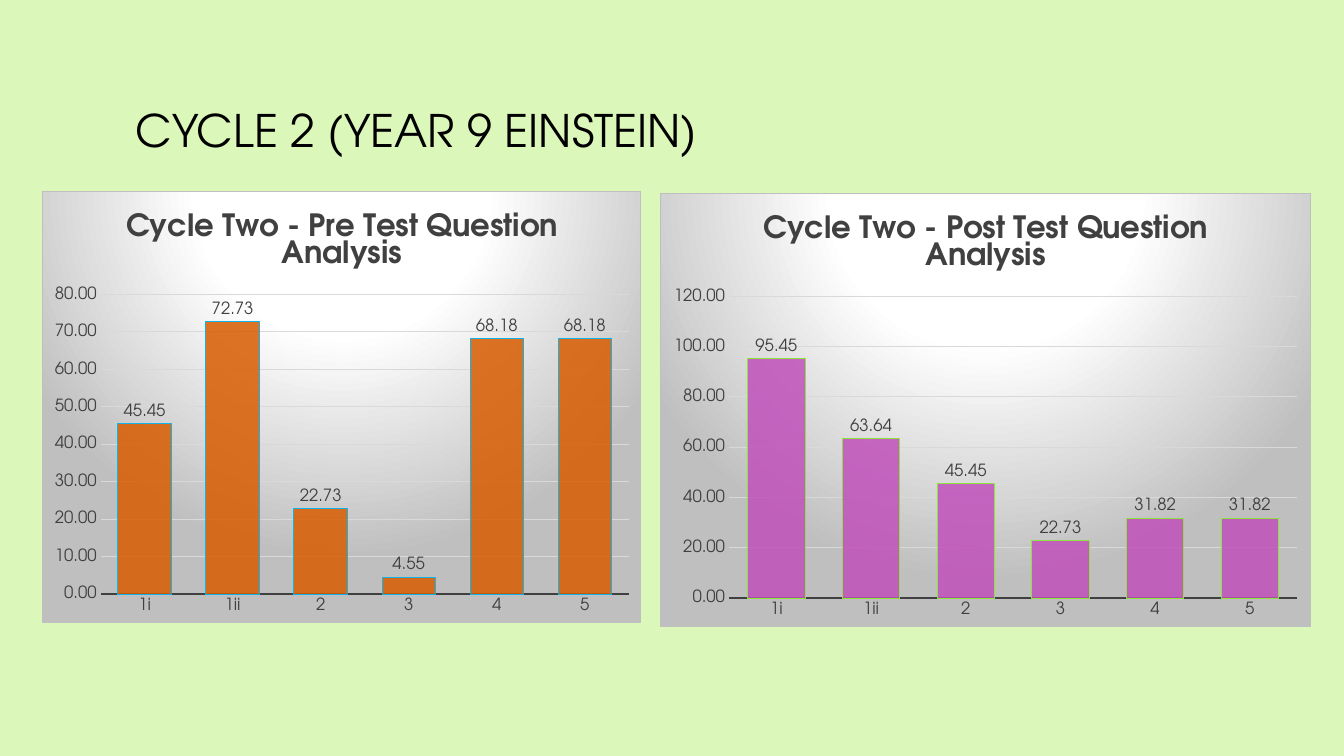
from lxml import etree
from pptx import Presentation
from pptx.chart.data import CategoryChartData
from pptx.dml.color import RGBColor
from pptx.enum.chart import XL_CHART_TYPE, XL_LABEL_POSITION, XL_TICK_MARK
from pptx.enum.text import MSO_ANCHOR
from pptx.oxml import parse_xml
from pptx.oxml.ns import qn
from pptx.util import Inches, Pt

COLUMNS = XL_CHART_TYPE.COLUMN_CLUSTERED
OUTSIDE_END = XL_LABEL_POSITION.OUTSIDE_END
NO_TICK = XL_TICK_MARK.NONE
MIDDLE = MSO_ANCHOR.MIDDLE

FONT = "TeX Gyre Adventor"
BLACK = RGBColor(0x00, 0x00, 0x00)
PALE_GREEN = RGBColor(0xDC, 0xF7, 0xBA)
DARK_GREY = RGBColor(0x40, 0x40, 0x40)
GRID_GREY = RGBColor(0xD9, 0xD9, 0xD9)
ORANGE = RGBColor(0xD8, 0x5C, 0x00)
BLUE = RGBColor(0x12, 0xB2, 0xEB)
PURPLE = RGBColor(0xC0, 0x50, 0xBB)
GREEN = RGBColor(0x8E, 0xE2, 0x40)

QUESTIONS = ["1i", "1ii", "2", "3", "4", "5"]
PRE_SCORES = [45.45, 72.73, 22.73, 4.55, 68.18, 68.18]
POST_SCORES = [95.45, 63.64, 45.45, 22.73, 31.82, 31.82]

PANEL_XML = """
<c:spPr xmlns:c="http://schemas.openxmlformats.org/drawingml/2006/chart"
        xmlns:a="http://schemas.openxmlformats.org/drawingml/2006/main">
  <a:gradFill>
    <a:gsLst>
      <a:gs pos="0"><a:srgbClr val="FFFFFF"/></a:gs>
      <a:gs pos="39000"><a:srgbClr val="FFFFFF"/></a:gs>
      <a:gs pos="100000"><a:srgbClr val="BFBFBF"/></a:gs>
    </a:gsLst>
    <a:path path="circle">
      <a:fillToRect l="50000" t="-80000" r="50000" b="180000"/>
    </a:path>
  </a:gradFill>
  <a:ln w="9525"><a:solidFill><a:srgbClr val="BFBFBF"/></a:solidFill></a:ln>
</c:spPr>
"""


def style_font(font, size, color, bold=False):
    font.name = FONT
    font.size = Pt(size)
    font.bold = bold
    font.color.rgb = color


def add_heading(slide, text):
    heading = slide.shapes.add_textbox(
        Inches(1.25), Inches(0.67), Inches(10.83), Inches(1.24))
    frame = heading.text_frame
    frame.word_wrap = True
    frame.vertical_anchor = MIDDLE
    frame.text = text
    style_font(frame.paragraphs[0].runs[0].font, 32, BLACK)


def style_axes(chart, top, step):
    for axis in (chart.category_axis, chart.value_axis):
        axis.major_tick_mark = NO_TICK
        axis.minor_tick_mark = NO_TICK
        style_font(axis.tick_labels.font, 12, DARK_GREY)

    question_line = chart.category_axis.format.line
    question_line.color.rgb = DARK_GREY
    question_line.width = Pt(1.5)

    scores = chart.value_axis
    scores.minimum_scale = 0
    scores.maximum_scale = top
    scores.major_unit = step
    scores.format.line.fill.background()
    scores.major_gridlines.format.line.color.rgb = GRID_GREY
    scores.major_gridlines.format.line.width = Pt(0.75)
    scores.tick_labels.number_format = "0.00"
    scores.tick_labels.number_format_is_linked = False


def style_columns(plot, fill_color, line_color):
    plot.gap_width = 65
    plot.vary_by_categories = False
    columns = plot.series[0].format
    columns.fill.solid()
    columns.fill.fore_color.rgb = fill_color
    columns.line.color.rgb = line_color
    columns.line.width = Pt(0.75)
    color = plot.series[0]._element.spPr.find(
        qn("a:solidFill")).find(qn("a:srgbClr"))
    etree.SubElement(color, qn("a:alpha")).set("val", "85000")

    plot.has_data_labels = True
    labels = plot.data_labels
    labels.show_value = True
    labels.position = OUTSIDE_END
    labels.number_format = "0.00"
    labels.number_format_is_linked = False
    style_font(labels.font, 12, DARK_GREY)


def add_score_chart(slide, bounds, title, scores, top, step, colors):
    data = CategoryChartData(number_format="0.00")
    data.categories = QUESTIONS
    data.add_series("Series 1", scores)
    chart = slide.shapes.add_chart(
        COLUMNS, *[Inches(length) for length in bounds], data).chart
    chart.has_legend = False
    style_font(chart.font, 10, DARK_GREY)
    chart.has_title = True
    title_frame = chart.chart_title.text_frame
    title_frame.text = title
    style_font(title_frame.paragraphs[0].runs[0].font, 22, DARK_GREY, True)
    chart._chartSpace.find(qn("c:chart")).addnext(parse_xml(PANEL_XML))
    style_axes(chart, top, step)
    style_columns(chart.plots[0], *colors)


def main():
    deck = Presentation()
    deck.slide_width = Inches(13.33)
    deck.slide_height = Inches(7.5)
    slide = deck.slides.add_slide(deck.slide_layouts[6])
    slide.background.fill.solid()
    slide.background.fill.fore_color.rgb = PALE_GREEN

    add_heading(slide, "CYCLE 2 (YEAR 9 EINSTEIN)")
    add_score_chart(slide, (0.42, 1.89, 5.94, 4.29),
                    "Cycle Two - Pre Test Question Analysis",
                    PRE_SCORES, 80, 10, (ORANGE, BLUE))
    add_score_chart(slide, (6.55, 1.91, 6.45, 4.31),
                    "Cycle Two - Post Test Question Analysis",
                    POST_SCORES, 120, 20, (PURPLE, GREEN))
    deck.save("out.pptx")


if __name__ == "__main__":
    main()
